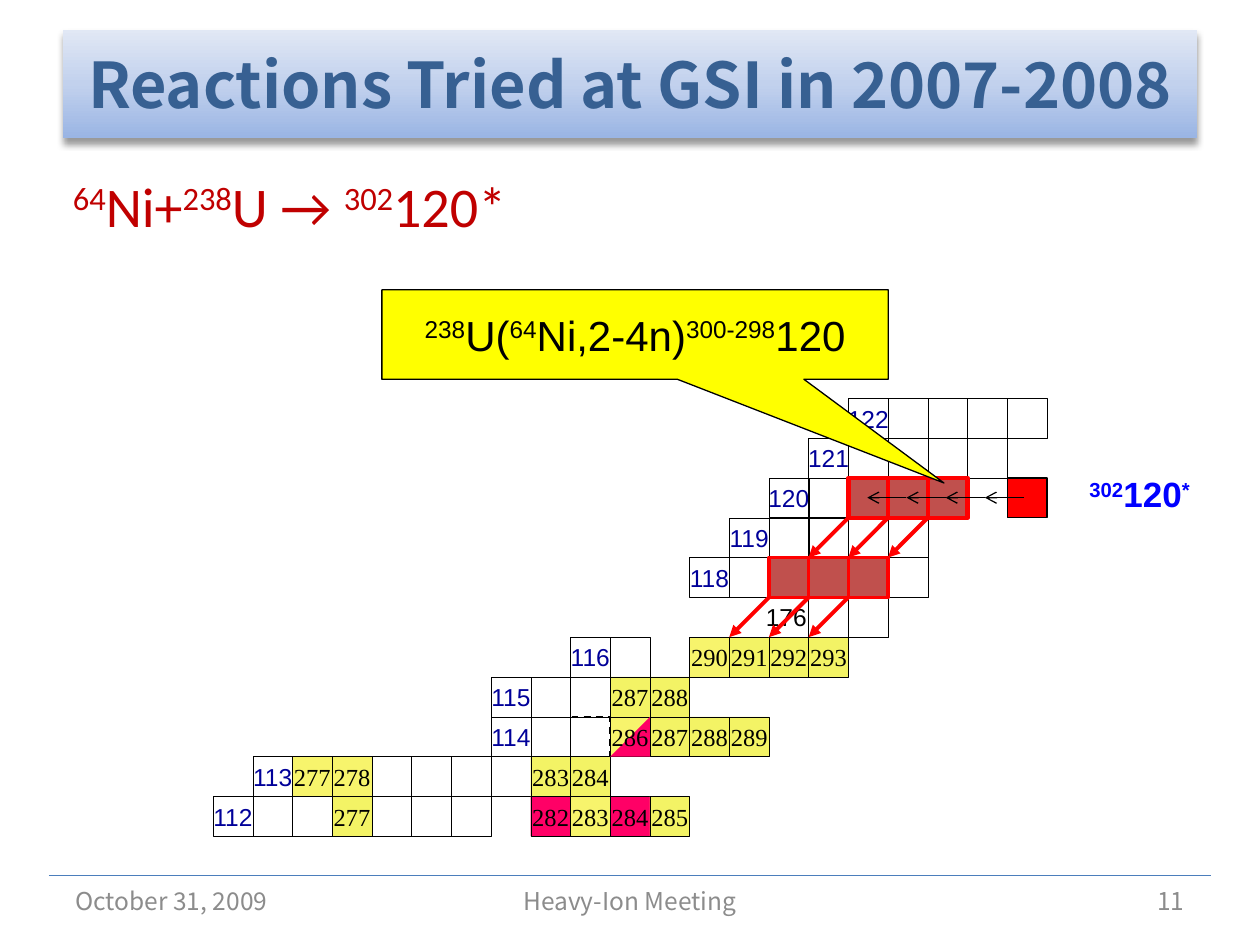
from lxml import etree
from pptx import Presentation
from pptx.dml.color import RGBColor
from pptx.enum.dml import MSO_LINE
from pptx.enum.shapes import MSO_CONNECTOR, MSO_SHAPE
from pptx.enum.text import MSO_ANCHOR, MSO_AUTO_SIZE, PP_ALIGN
from pptx.oxml import parse_xml
from pptx.oxml.ns import nsdecls, qn
from pptx.util import Pt

LEFT, CENTER, RIGHT = PP_ALIGN.LEFT, PP_ALIGN.CENTER, PP_ALIGN.RIGHT
MIDDLE, NO_AUTOFIT = MSO_ANCHOR.MIDDLE, MSO_AUTO_SIZE.NONE
RECTANGLE, TRIANGLE = MSO_SHAPE.RECTANGLE, MSO_SHAPE.RIGHT_TRIANGLE
CALLOUT = MSO_SHAPE.RECTANGULAR_CALLOUT
STRAIGHT, DASH = MSO_CONNECTOR.STRAIGHT, MSO_LINE.DASH

BLACK = RGBColor(0x00, 0x00, 0x00)
NAVY = RGBColor(0x00, 0x00, 0x99)
BLUE = RGBColor(0x00, 0x00, 0xFF)
TITLE_BLUE = RGBColor(0x37, 0x60, 0x92)
RULE_BLUE = RGBColor(0x4B, 0x7E, 0xBC)
GREY = RGBColor(0x8C, 0x8C, 0x8C)
RED = RGBColor(0xFF, 0x00, 0x00)
DARK_RED = RGBColor(0xC0, 0x00, 0x00)
BRICK = RGBColor(0xC0, 0x50, 0x4D)
PINK = RGBColor(0xFF, 0x00, 0x66)
YELLOW = RGBColor(0xFF, 0xFF, 0x00)
STRAW = RGBColor(0xF3, 0xF3, 0x65)
PALE_STRAW = RGBColor(0xF7, 0xF4, 0x6C)

NOTO, ARIAL, TIMES = "Noto Sans CJK KR", "Arial", "Times New Roman"

# Chart of nuclides: one step right per neutron, one row per element
GRID_LEFT, GRID_TOP = 121.75, 227.6
STEP_X, STEP_Y, CELL = 22.69, 22.75, 22.75
TOP_ELEMENT = 122

# First letter of a cell: fill, line colour, line width
STYLES = {
    "e": (None, BLACK, 0.25),
    "s": (STRAW, BLACK, 0.25),
    "p": (PALE_STRAW, BLACK, 0.25),
    "k": (PINK, BLACK, 0.25),
    "d": (None, BLACK, 1),
    "b": (BRICK, RED, 2.5),
    "c": (BRICK, RED, 2),
    "x": (RED, BLACK, 0.75),
}
# Element, first column, cells ("_" is a gap, "e" an empty or element cell)
ROWS = [
    (112, 0, "e112 e e s277 e e e _ k282 p283 k284 s285"),
    (113, 1, "e113 p277 p278 e e e e s283 s284"),
    (114, 7, "e114 e d p s287 s288 s289"),
    (115, 7, "e115 e e s287 s288"),
    (116, 9, "e116 e _ p290 s291 s292 s293"),
    (117, 15, "e e"),
    (118, 12, "e118 e _ _ _ e"),
    (119, 13, "e119 e e e e"),
    (120, 14, "e120 e"),
    (121, 15, "e121 e e e e"),
    (122, 16, "e122 e e e e"),
    (118, 14, "c c c"),
    (120, 16, "b b b _ x"),
]


def write(shape, text, font, size, color, align=CENTER, bold=False, wrap=True):
    """Fill a shape with one paragraph; parts between ^ marks are superscript."""
    frame = shape.text_frame
    frame.word_wrap = wrap
    frame.auto_size = NO_AUTOFIT
    frame.vertical_anchor = MIDDLE
    para = frame.paragraphs[0]
    para.alignment = align
    para.font.name, para.font.size = font, Pt(size)
    para.font.bold, para.font.color.rgb = bold, color
    for index, part in enumerate(text.split("^")):
        if part:
            span = para.add_run()
            span.text = part
            if index % 2:
                span._r.get_or_add_rPr().set("baseline", "30000")


def add_line(x1, y1, x2, y2, color, width, head=None):
    line = slide.shapes.add_connector(STRAIGHT, Pt(x1), Pt(y1), Pt(x2), Pt(y2))
    line.line.color.rgb = color
    line.line.width = Pt(width)
    if head:
        etree.SubElement(line.line._get_or_add_ln(), qn("a:tailEnd"), type=head)
    etree.SubElement(line._element.spPr, qn("a:effectLst"))


deck = Presentation()
deck.slide_width, deck.slide_height = Pt(720), Pt(540)
slide = deck.slides.add_slide(deck.slide_layouts[5])
shapes = slide.shapes

# Title band with gradient and shadow
title = shapes.title
title.left, title.top, title.width, title.height = Pt(36), Pt(16.9), Pt(648), Pt(61.9)
write(title, "Reactions Tried at GSI in 2007-2008", NOTO, 36, TITLE_BLUE, bold=True)
title._element.spPr.append(parse_xml(
    f'<a:gradFill {nsdecls("a")} rotWithShape="1"><a:gsLst>'
    '<a:gs pos="0"><a:srgbClr val="9AB5E4"/></a:gs>'
    '<a:gs pos="50000"><a:srgbClr val="C2D1ED"/></a:gs>'
    '<a:gs pos="100000"><a:srgbClr val="E1E8F5"/></a:gs>'
    '</a:gsLst><a:lin ang="16200000" scaled="0"/></a:gradFill>'))
title._element.spPr.append(parse_xml(
    f'<a:effectLst {nsdecls("a")}>'
    '<a:outerShdw blurRad="50800" dist="38100" dir="5400000" rotWithShape="0">'
    '<a:srgbClr val="000000"><a:alpha val="40000"/></a:srgbClr>'
    '</a:outerShdw></a:effectLst>'))

add_line(28, 500.4, 692, 500.4, RULE_BLUE, 0.75)

# Nuclide cells
for element, first_column, cells in ROWS:
    top = GRID_TOP + (TOP_ELEMENT - element) * STEP_Y
    for column, cell in enumerate(cells.split(), first_column):
        if cell == "_":
            continue
        fill, line_color, line_width = STYLES[cell[0]]
        box = shapes.add_shape(RECTANGLE, Pt(GRID_LEFT + column * STEP_X), Pt(top),
                               Pt(CELL), Pt(CELL))
        box.shadow.inherit = False
        if fill is None:
            box.fill.background()
        else:
            box.fill.solid()
            box.fill.fore_color.rgb = fill
        box.line.color.rgb = line_color
        box.line.width = Pt(line_width)
        if cell[0] == "d":
            box.line.dash_style = DASH
        number = cell[1:]
        if number:
            is_element = number == str(element)
            write(box, number, ARIAL if is_element else TIMES, 14,
                  NAVY if is_element else BLACK, wrap=False)

# Second decay mode of 286, in the lower right half of its cell
half = shapes.add_shape(TRIANGLE, Pt(GRID_LEFT + 10 * STEP_X), Pt(GRID_TOP + 8 * STEP_Y),
                        Pt(CELL), Pt(CELL))
half._element.spPr.xfrm.set("flipH", "1")
half.shadow.inherit = False
half.fill.solid()
half.fill.fore_color.rgb = PINK
half.line.fill.background()

# Text, font, size, colour, alignment, bold, wrap, left, top, width, height
TEXTS = [
    ("October 31, 2009", NOTO, 14, GREY, LEFT, False, True, 36, 500.5, 168, 28.75),
    ("Heavy-Ion Meeting", NOTO, 14, GREY, CENTER, False, True, 246, 500.5, 228, 28.75),
    ("11", NOTO, 14, GREY, RIGHT, False, True, 516, 500.5, 168, 28.75),
    ("^64^Ni+^238^U → ^302^120*", "Calibri", 32, DARK_RED, LEFT, False, True,
     34.6, 94.3, 279.4, 46),
    ("^302^120^*^", ARIAL, 20, BLUE, CENTER, True, False, 613.4, 266.4, 75.6, 31.7),
    ("176", ARIAL, 14, BLACK, CENTER, False, False, 430.6, 340.6, 37.4, 24),
    ("286", TIMES, 14, BLACK, CENTER, False, False,
     GRID_LEFT + 10 * STEP_X, GRID_TOP + 8 * STEP_Y, CELL, CELL),
]
for *style, left, top, width, height in TEXTS:
    write(shapes.add_textbox(Pt(left), Pt(top), Pt(width), Pt(height)), *style)

# Alpha decays: from 120 past 119 to 118, then past 117 to 116
for column in (18, 17, 16):
    for row, start in ((3, column), (5, column - 2)):
        x, y = GRID_LEFT + start * STEP_X, GRID_TOP + row * STEP_Y
        add_line(x, y, x - STEP_X, y + STEP_Y, RED, 2.25, "triangle")

callout = shapes.add_shape(CALLOUT, Pt(218.2), Pt(165.6), Pt(289.4), Pt(51.1))
callout.adjustments[0], callout.adjustments[1] = 0.61, 1.66
callout.shadow.inherit = False
callout.fill.solid()
callout.fill.fore_color.rgb = YELLOW
callout.line.color.rgb = BLACK
callout.line.width = Pt(0.75)
write(callout, "^238^U(^64^Ni,2-4n)^300-298^120", ARIAL, 24, BLACK)

# Neutron evaporation from the compound nucleus
for neutron in range(4):
    x = 585.2 - neutron * 22.4
    add_line(x, 284.4, x - 22.4, 284.4, BLACK, 0.75, "arrow")

deck.save("out.pptx")
